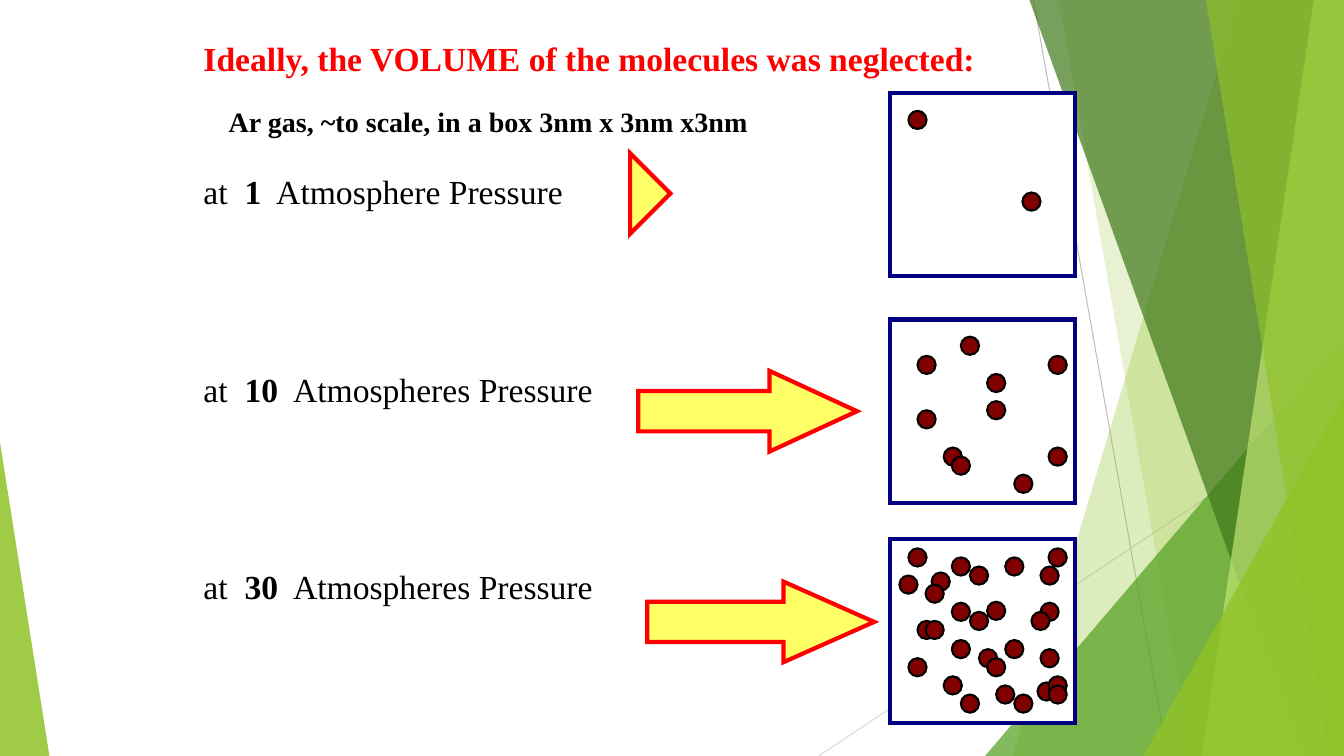
from lxml import etree
from pptx import Presentation
from pptx.dml.color import RGBColor
from pptx.enum import shapes, text
from pptx.oxml import ns
from pptx.util import Inches, Pt

BLACK = RGBColor(0, 0, 0)
WHITE = RGBColor(255, 255, 255)
RED = RGBColor(255, 0, 0)
YELLOW = RGBColor(0xFF, 0xFF, 0x66)
NAVY = RGBColor(0, 0, 0x80)
MAROON = RGBColor(0x80, 0, 0)
GREEN = RGBColor(0x90, 0xC2, 0x26)
MID_GREEN = RGBColor(0x54, 0xA0, 0x21)
DARK_GREEN = RGBColor(0x3F, 0x78, 0x19)
PALE_GREEN = RGBColor(0xC0, 0xE4, 0x74)
GREY = RGBColor(0xBF, 0xBF, 0xBF)
LIGHT_GREY = RGBColor(0xD9, 0xD9, 0xD9)

WIDTH, HEIGHT = 13.33, 7.5
KIND = shapes.MSO_SHAPE

# Thin lines: start, end, colour
HAIRLINES = [
    ((10.25, 0), (11.58, 7.5), GREY),
    ((13.33, 4.03), (8.12, 7.5), LIGHT_GREY),
]
# Facets, back to front: corner points, colour, opacity in percent.
# A band runs from its top x and bottom x to the right edge of the slide.
def band(top_x, bottom_x):
    return [(top_x, 0), (WIDTH, 0), (WIDTH, HEIGHT), (bottom_x, HEIGHT)]


def wedge(left, top):
    return [(left, HEIGHT), (WIDTH, top), (WIDTH, HEIGHT)]


FACETS = [
    (band(12.28, 10.04), GREEN, 30),
    (band(10.5, 11.82), GREEN, 20),
    (wedge(9.77, 3.33), MID_GREEN, 72),
    (band(10.21, 12.91), DARK_GREEN, 70),
    (band(13.03, 11.92), PALE_GREEN, 70),
    (band(11.96, 13.18), GREEN, 65),
    (wedge(11.34, 3.93), GREEN, 80),
    ([(0, 4.39), (0.49, HEIGHT), (0, HEIGHT)], GREEN, 85),
]

# Gas boxes: top, and the molecules as offsets from the box corner
GAS_LEFT, GAS_WIDTH, GAS_HEIGHT = 8.83, 1.83, 1.82
MOLECULE = 0.18
GAS_BOXES = [
    (0.92, [(0.18, 0.18), (1.31, 0.99)]),
    (3.17, [(0.27, 0.36), (0.27, 0.9), (0.7, 0.17), (0.96, 0.81),
            (1.23, 1.54), (0.53, 1.27), (0.96, 0.54), (0.61, 1.36),
            (1.57, 0.36), (1.57, 1.27)]),
    (5.35, [(0.18, 0.09), (0.79, 0.27), (0.41, 0.33), (0.61, 0.18),
            (1.49, 0.63), (0.96, 0.62), (0.79, 0.72), (1.4, 0.72),
            (1.49, 1.09), (1.14, 1.0), (1.57, 0.09), (1.46, 1.42),
            (1.57, 1.36), (1.57, 1.45), (0.09, 0.36), (0.35, 0.45),
            (0.27, 0.81), (0.61, 0.63), (0.18, 1.18), (0.61, 1.0),
            (0.53, 1.36), (0.88, 1.09), (0.7, 1.54), (0.96, 1.18),
            (0.35, 0.81), (1.23, 1.54), (1.05, 1.45), (1.49, 0.27),
            (1.14, 0.18)]),
]

# Arrows: left, top, width, head length relative to the height
ARROW_HEIGHT = 0.8
ARROWS = [
    (6.25, 1.52, 0.4, 1.167),
    (6.33, 3.68, 2.17, 1.084),
    (6.42, 5.77, 2.25, 1.125),
]

# Text: place, then paragraphs of (space before in points, size, colour, runs)
TEXTS = [
    ((1.92, 0.25, 9.17, 6.08), [
        (0, 24, RED, [("Ideally, the VOLUME of the molecules was neglected:", True)]),
        (60.5, 24, BLACK, [("at  ", False), ("1", True), ("  Atmosphere Pressure", False)]),
        (106.5, 24, BLACK, [("at  ", False), ("10", True), ("  Atmospheres Pressure", False)]),
        (106.5, 24, BLACK, [("at  ", False), ("30", True), ("  Atmospheres Pressure", False)]),
    ]),
    ((2.17, 0.92, 6.42, 0.5), [
        (0, 20, BLACK, [("Ar gas, ~to scale, in a box 3nm x 3nm x3nm", True)]),
    ]),
]


def assign(target, values):
    for name, value in values.items():
        setattr(target, name, value)


def paint(shape, fill, line=None, weight=0):
    shape.shadow.inherit = False
    shape.fill.solid()
    shape.fill.fore_color.rgb = fill
    if line is None:
        shape.line.fill.background()
        return
    shape.line.color.rgb = line
    shape.line.width = Pt(weight)
    outline = shape.element.spPr.find(ns.qn("a:ln"))
    etree.SubElement(outline, ns.qn("a:miter"), lim="800000")


def add_preset(page, kind, place, fill, line, weight):
    shape = page.shapes.add_shape(kind, *map(Inches, place))
    paint(shape, fill, line, weight)
    return shape


def add_hairline(page, start, end, colour):
    line = page.shapes.add_connector(
        shapes.MSO_CONNECTOR.STRAIGHT, *map(Inches, start + end))
    line.line.color.rgb = colour
    line.line.width = Pt(0.75)
    etree.SubElement(line.element.spPr, ns.qn("a:effectLst"))


def add_facet(page, points, colour, opacity):
    corners = [(Inches(x), Inches(y)) for x, y in points]
    builder = page.shapes.build_freeform(*corners[0])
    builder.add_line_segments(corners[1:])
    facet = builder.convert_to_shape()
    paint(facet, colour)
    tint = facet.element.spPr.find(".//" + ns.qn("a:srgbClr"))
    etree.SubElement(tint, ns.qn("a:alpha"), val=str(opacity * 1000))


def add_text(page, place, paragraphs):
    frame = page.shapes.add_textbox(*map(Inches, place)).text_frame
    assign(frame, {"word_wrap": True, "auto_size": text.MSO_AUTO_SIZE.NONE})
    for index, (before, size, colour, runs) in enumerate(paragraphs):
        para = frame.add_paragraph() if index else frame.paragraphs[0]
        assign(para, {"line_spacing": 1.2, "space_before": Pt(before)})
        for words, bold in runs:
            span = para.add_run()
            span.text = words
            assign(span.font, {"name": "Times New Roman", "size": Pt(size), "bold": bold})
            span.font.color.rgb = colour


def main():
    deck = Presentation()
    assign(deck, {"slide_width": Inches(WIDTH), "slide_height": Inches(HEIGHT)})
    page = deck.slides.add_slide(deck.slide_layouts[6])
    for hairline in HAIRLINES:
        add_hairline(page, *hairline)
    for facet in FACETS:
        add_facet(page, *facet)
    for top, molecules in GAS_BOXES:
        add_preset(page, KIND.RECTANGLE, (GAS_LEFT, top, GAS_WIDTH, GAS_HEIGHT),
                   WHITE, NAVY, 3)
        for x, y in molecules:
            add_preset(page, KIND.FLOWCHART_CONNECTOR,
                       (GAS_LEFT + x, top + y, MOLECULE, MOLECULE), MAROON, BLACK, 1.5)
    for left, top, width, head in ARROWS:
        arrow = add_preset(page, KIND.RIGHT_ARROW, (left, top, width, ARROW_HEIGHT),
                           YELLOW, RED, 3)
        arrow.adjustments[1] = head
    for place, paragraphs in TEXTS:
        add_text(page, place, paragraphs)
    deck.save("out.pptx")


if __name__ == "__main__":
    main()
